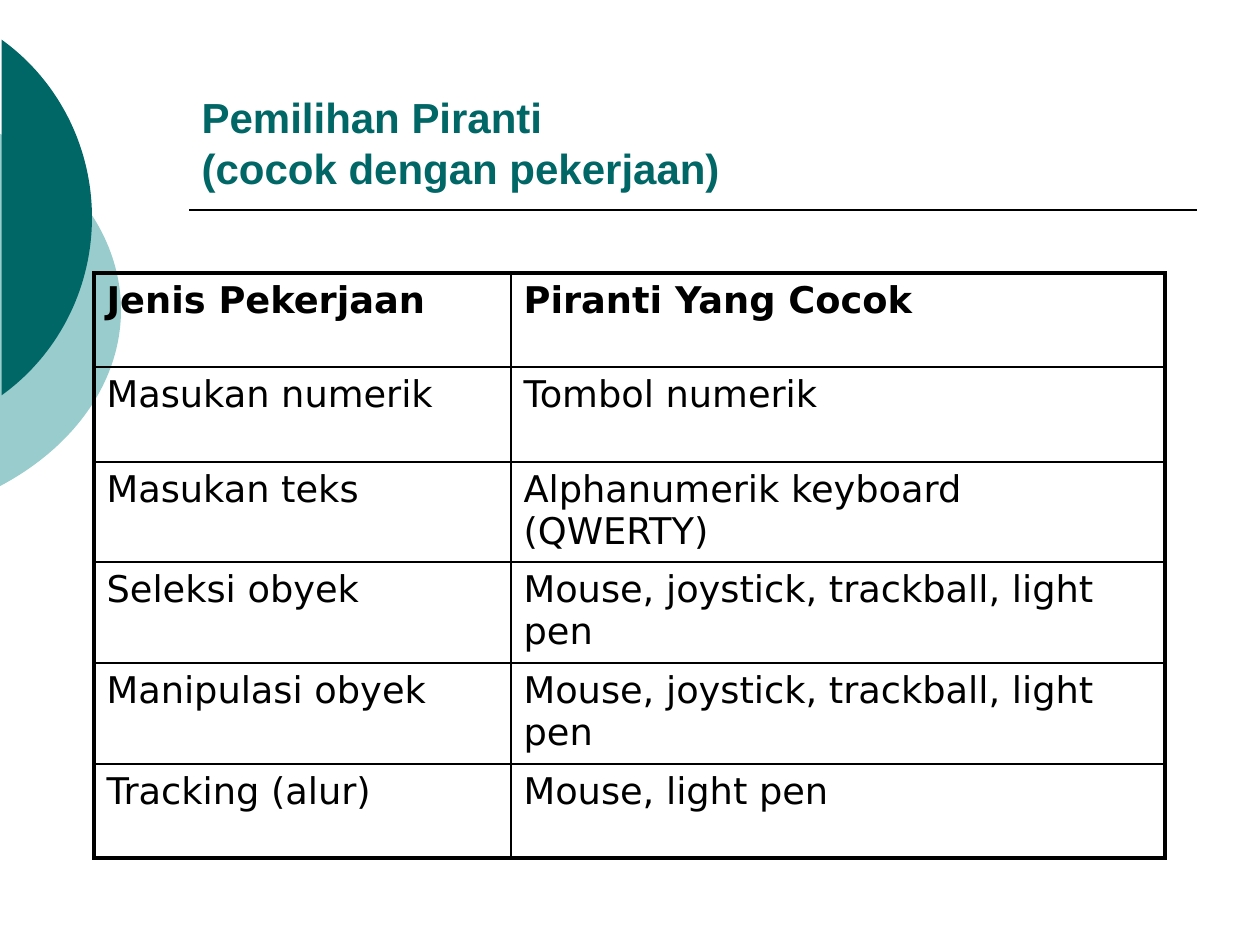
import math
from dataclasses import dataclass

from lxml import etree
from pptx import Presentation
from pptx import util as u
from pptx.dml.color import RGBColor
from pptx.enum import shapes, text
from pptx.oxml.ns import qn

PX_PER_INCH = 126


def px(n: int) -> u.Emu:
    return u.Emu(round(n * 914400 / PX_PER_INCH))


@dataclass(frozen=True)
class Theme:
    teal: str = "006666"
    pale: str = "99CCCC"
    ink: str = "000000"
    title_font: str = "Arial"
    body_font: str = "DejaVu Sans"
    title_pt: int = 24
    body_pt: int = 21
    thin_pt: float = 1
    thick_pt: float = 2.25


@dataclass(frozen=True)
class EdgeDisc:
    """Ellipse cut off by a chord along the slide's left edge."""
    left: int
    top: int
    width: int
    height: int
    color: str


@dataclass(frozen=True)
class Task:
    kind: str
    device: str


THEME = Theme()
DISCS = [EdgeDisc(-446, 95, 567, 430, THEME.pale),
         EdgeDisc(-334, 0, 426, 435, THEME.teal)]
TASKS = [
    Task("Jenis Pekerjaan", "Piranti Yang Cocok"),
    Task("Masukan numerik", "Tombol numerik"),
    Task("Masukan teks", "Alphanumerik keyboard (QWERTY)"),
    Task("Seleksi obyek", "Mouse, joystick, trackball, light pen"),
    Task("Manipulasi obyek", "Mouse, joystick, trackball, light pen"),
    Task("Tracking (alur)", "Mouse, light pen"),
]
COLUMNS = [417, 654]
ROWS = [94, 95, 100, 101, 101, 94]


def style(font, name: str, size: float, color: str, bold: bool) -> None:
    font.name, font.size, font.bold = name, u.Pt(size), bold
    font.color.rgb = RGBColor.from_string(color)


def draw_disc(s, disc: EdgeDisc) -> None:
    sp = s.shapes.add_shape(shapes.MSO_SHAPE.CHORD, px(disc.left), px(disc.top),
                            px(disc.width), px(disc.height))
    # Angle at which the ellipse meets the slide's left edge
    radius = disc.width / 2
    angle = math.degrees(math.acos(-(disc.left + radius) / radius))
    units = 60000 / 100000  # angle units per adjustment unit
    sp.adjustments[0] = (360 - angle) * units
    sp.adjustments[1] = angle * units
    sp.shadow.inherit = False
    sp.fill.solid()
    sp.fill.fore_color.rgb = RGBColor.from_string(disc.color)
    sp.line.fill.background()


def draw_rule(s, x1: int, x2: int, y: int) -> None:
    line = s.shapes.add_connector(shapes.MSO_CONNECTOR.STRAIGHT,
                                  px(x1), px(y), px(x2), px(y))
    line.line.color.rgb = RGBColor.from_string(THEME.ink)
    line.line.width = u.Pt(THEME.thin_pt)
    etree.SubElement(line._element.spPr, qn("a:effectLst"))


def draw_title(s, wording: str) -> None:
    sp = s.shapes.title
    sp.left, sp.top, sp.width, sp.height = px(189), px(42), px(1008), px(157)
    tf = sp.text_frame
    tf.text = wording
    tf.auto_size = text.MSO_AUTO_SIZE.NONE
    tf.vertical_anchor = text.MSO_ANCHOR.BOTTOM
    p = tf.paragraphs[0]
    p.alignment = text.PP_ALIGN.LEFT
    for r in p.runs:
        style(r.font, THEME.title_font, THEME.title_pt, THEME.teal, True)


def set_border(cell, side: str, width: float) -> None:
    ln = etree.SubElement(cell._tc.get_or_add_tcPr(), qn(f"a:ln{side}"),
                          w=str(u.Pt(width)))
    fill = etree.SubElement(ln, qn("a:solidFill"))
    etree.SubElement(fill, qn("a:srgbClr"), val=THEME.ink)


def draw_table(s, left: int, top: int) -> None:
    table = s.shapes.add_table(len(ROWS), len(COLUMNS), px(left), px(top),
                               px(sum(COLUMNS)), px(sum(ROWS))).table
    table.first_row = table.horz_banding = False
    for column, width in zip(table.columns, COLUMNS):
        column.width = px(width)
    for row, height in zip(table.rows, ROWS):
        row.height = px(height)

    last_row, last_col = len(ROWS) - 1, len(COLUMNS) - 1
    for i, task in enumerate(TASKS):
        for j, wording in enumerate((task.kind, task.device)):
            cell = table.cell(i, j)
            cell.text = wording
            style(cell.text_frame.paragraphs[0].runs[0].font,
                  THEME.body_font, THEME.body_pt, THEME.ink, i == 0)
            # The outer frame is thick, inner lines are thin
            outer = {"L": j == 0, "R": j == last_col,
                     "T": i == 0, "B": i == last_row}
            for side, is_outer in outer.items():
                set_border(cell, side,
                           THEME.thick_pt if is_outer else THEME.thin_pt)
            cell.fill.background()


def main() -> None:
    prs = Presentation()
    prs.slide_width, prs.slide_height = px(1260), px(945)
    s = prs.slides.add_slide(prs.slide_layouts[5])

    # Background decoration
    for disc in DISCS:
        draw_disc(s, disc)

    # Heading
    draw_rule(s, 189, 1197, 210)
    draw_title(s, "Pemilihan Piranti \v(cocok dengan pekerjaan)")

    # Tasks and matching devices
    draw_table(s, 94, 273)
    prs.save("out.pptx")


if __name__ == "__main__":
    main()
